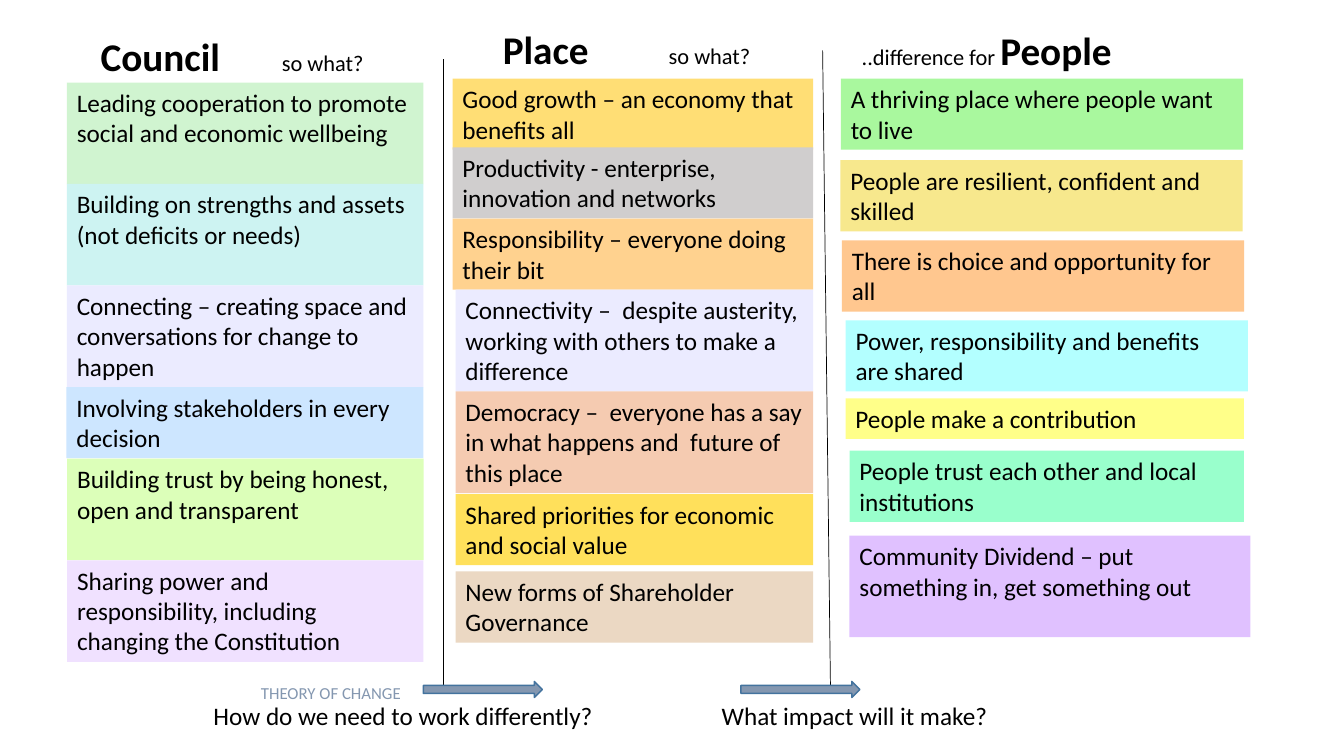
from pptx import Presentation
from pptx.dml.color import RGBColor
from pptx.enum import shapes as s, text as t
from pptx.oxml.ns import qn
from pptx.util import Pt
from lxml import etree

FONT = "Calibri"
LINE, PAD = 21.8, 7.2  # height of one text line, and of both margins

# Each card: left, top, width, lines of height, fill, text
COUNCIL = [
    (47.8, 59, 254.6, 3, "D0F4D0", "Leading cooperation to promote social and economic wellbeing"),
    (47.8, 131.3, 254.6, 3, "CDF3F2", "Building on strengths and assets (not deficits or needs)"),
    (47.8, 203.9, 254.6, 3, "EBEBFF", "Connecting – creating space and conversations for change to happen"),
    (47.5, 276.5, 254.9, 2, "CDE6FF", "Involving stakeholders in every decision"),
    (48, 327.6, 254.6, 3, "DCFFB9", "Building trust by being honest, open and transparent"),
    (48, 400.2, 254.4, 3, "F0E1FF",
     "Sharing power and responsibility, including changing the Constitution"),
]
PLACE = [
    (323.3, 56.2, 257.6, 2, "FFDE75", "Good growth – an economy that benefits all"),
    (323.3, 105.3, 257.6, 2, "D0CECE", "Productivity - enterprise, innovation and networks"),
    (323.3, 156.2, 257.6, 2, "FFD28F", "Responsibility – everyone doing their bit"),
    (325.4, 206.9, 255.5, 3, "EBEBFF",
     "Connectivity –  despite austerity, working with others to make a difference"),
    (325.4, 279.6, 255.5, 3, "F5CBB1",
     "Democracy –  everyone has a say in what happens and  future of this place"),
    (325.4, 353, 255.5, 2, "FFE05B", "Shared priorities for economic and social value"),
    (325.4, 408.2, 255.5, 2, "EBD8C3", "New forms of Shareholder Governance"),
]
PEOPLE = [
    (600.6, 56.2, 287.3, 2, "A9F89E", "A thriving place where people want to live"),
    (600.3, 114.5, 287.3, 2, "F7E88D", "People are resilient, confident and skilled"),
    (601.4, 171.8, 287.3, 2, "FFC78F", "There is choice and opportunity for all"),
    (604, 228.8, 287.3, 2, "B3FFFF", "Power, responsibility and benefits are shared"),
    (604, 284.6, 284.6, 1, "FFFF89", "People make a contribution"),
    (606.8, 322, 281.8, 2, "99FFCC", "People trust each other and local institutions"),
    (606.8, 382.6, 286.3, 3, "E0C1FF", "Community Dividend – put something in, get something out"),
]


def color(code):
    return RGBColor.from_string(code)


def style(para, size, code="000000"):
    para.alignment = t.PP_ALIGN.LEFT
    para.font.name = FONT
    para.font.size = Pt(size)
    para.font.color.rgb = color(code)


def label(slide, box, words, size=18, code="000000"):
    frame = slide.shapes.add_textbox(*map(Pt, box)).text_frame
    frame.word_wrap = True
    para = frame.paragraphs[0]
    para.text = words
    style(para, size, code)
    return para


def heading(slide, box, parts, stop=None):
    """Write (words, is_title) parts, with an optional tab stop in points."""
    para = label(slide, box, "", 16)
    if stop:
        props = para._p.get_or_add_pPr()
        tabs = etree.Element(qn("a:tabLst"))
        etree.SubElement(tabs, qn("a:tab"), pos=str(Pt(stop)), algn="l")
        props.insert(0, tabs)
    for words, title in parts:
        run = para.add_run()
        run.text = words
        if title:
            run.font.size = Pt(28)
            run.font.bold = True


def card(slide, left, top, width, lines, fill, words):
    box = left, top, width, lines * LINE + PAD
    shape = slide.shapes.add_shape(s.MSO_SHAPE.RECTANGLE, *map(Pt, box))
    shape.shadow.inherit = False
    shape.fill.solid()
    shape.fill.fore_color.rgb = color(fill)
    shape.line.fill.background()
    frame = shape.text_frame
    frame.word_wrap = True
    frame.vertical_anchor = t.MSO_ANCHOR.TOP
    frame.paragraphs[0].text = words
    style(frame.paragraphs[0], 18)


def arrow(slide, left):
    box = left, 486.7, 85, 11.5
    shape = slide.shapes.add_shape(s.MSO_SHAPE.RIGHT_ARROW, *map(Pt, box))
    shape.shadow.inherit = False
    shape.fill.solid()
    shape.fill.fore_color.rgb = color("8497B0")
    shape.line.color.rgb = color("43739E")
    shape.line.width = Pt(1)


def divider(slide, *ends):
    line = slide.shapes.add_connector(s.MSO_CONNECTOR.STRAIGHT, *map(Pt, ends))
    line.line.color.rgb = color("000000")
    line.line.width = Pt(0.5)
    etree.SubElement(line._element.spPr, qn("a:effectLst"))


def main():
    deck = Presentation()
    deck.slide_width, deck.slide_height = Pt(960), Pt(540)
    slide = deck.slides.add_slide(deck.slide_layouts[6])

    heading(slide, (64.8, 19.4, 226.8, 41),
            [("Council\t", True), ("so what?", False)], 129.5)
    heading(slide, (352.1, 14.4, 195.8, 41),
            [("Place\t", True), ("so what?", False)], 118.5)
    heading(slide, (608.4, 15, 203.8, 41),
            [("..difference for ", False), ("People", True)])

    divider(slide, 316.4, 42.5, 316.4, 496)
    divider(slide, 587.6, 36, 593.2, 489.6)

    label(slide, (145.4, 497, 289.4, 29), "How do we need to work differently?")
    label(slide, (508.4, 497, 289.4, 29), "What impact will it make?")
    label(slide, (179.3, 484, 123, 21.6), "THEORY OF CHANGE", 12, "8497B0")
    for left in (302.4, 529.2):
        arrow(slide, left)

    for row in COUNCIL + PLACE + PEOPLE:
        card(slide, *row)

    deck.save("out.pptx")


if __name__ == "__main__":
    main()
